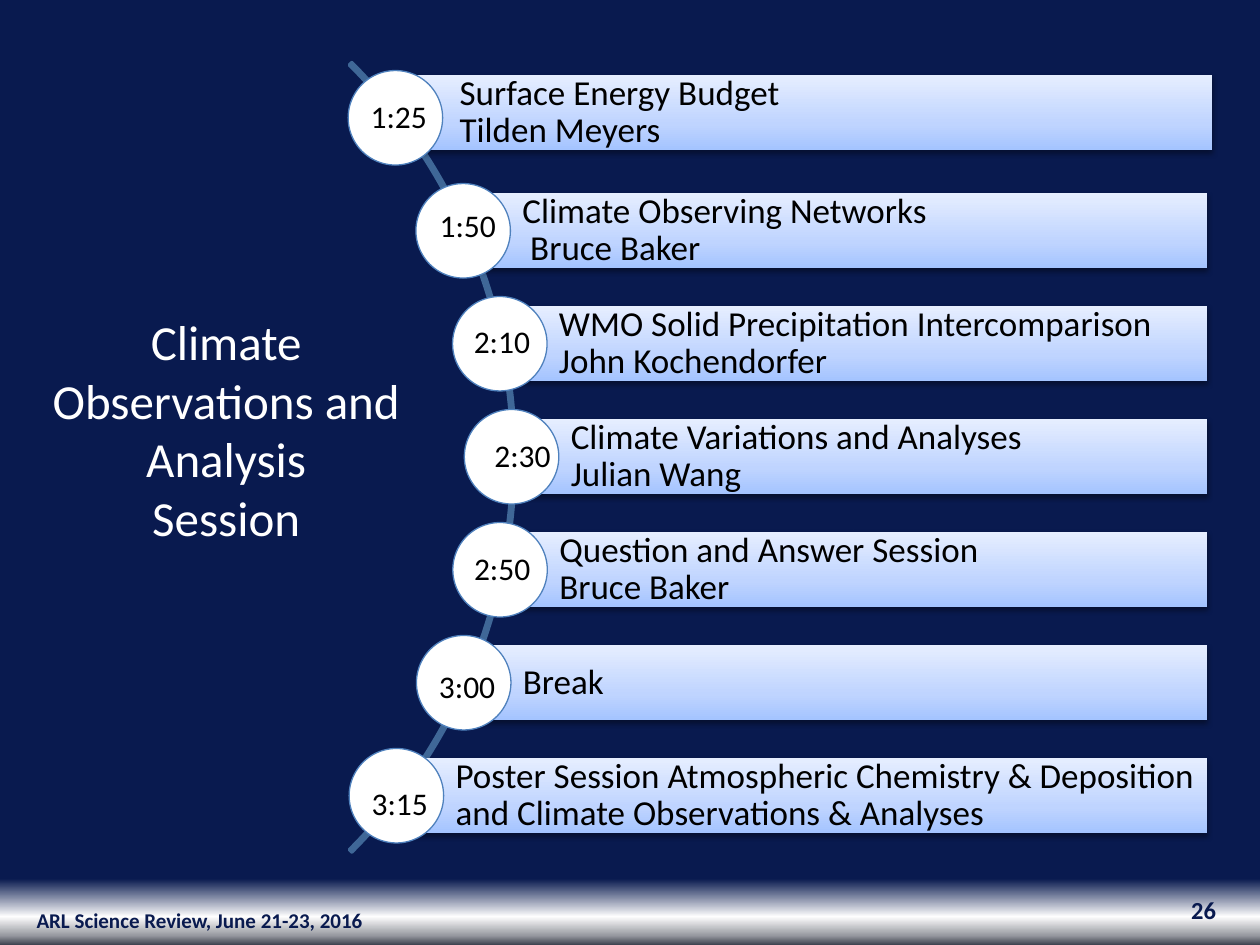
"""Build the session agenda slide with times set along an arc."""
from dataclasses import dataclass
from math import sqrt

from lxml.etree import SubElement
from pptx import Presentation
from pptx.dml.color import RGBColor
from pptx.enum.shapes import MSO_SHAPE as Shp
from pptx.enum.text import MSO_ANCHOR as Anchor, MSO_AUTO_SIZE as Auto, PP_ALIGN as Align
from pptx.oxml import parse_xml
from pptx.oxml.ns import nsdecls, qn
from pptx.util import Inches, Pt

COLORS = {"navy": "091A4F", "white": "FFFFFF", "black": "000000", "arc": "3F6797", "ring": "4F81BD"}
BAR_STOPS = [(0, "A4C4FF"), (35, "BFD4FF"), (100, "E6EEFF")]
PAGE_STOPS = [(93, "091A4F"), (97, "FEFEFE"), (99, "9799A0"), (100, "3C414E"), (100, "494E5A"),
              (100, "636771"), (100, "2F3442"), (100, "FFFFFF"), (100, "9DA0A6"), (100, "7F7F7F")]
ARC_X, ARC_Y, ARC_R = -0.34, 3.63, 4.43
TRACK_R = 4.4
DOT, BAR_H, BAR_RIGHT = 0.75, 0.6, 9.58
FIRST_Y, LAST_Y = 0.935, 6.315


@dataclass
class Session:
    """One agenda row; label is the offset of the time from its circle."""
    time: str
    lines: list[str]
    label: tuple[float, float]
    nudge: tuple[float, float] = (0, 0)


SESSIONS = [
    Session("1:25", ["Surface Energy Budget", "Tilden Meyers"], (0.08, 0.16), (0.04, -0.04)),
    Session("1:50", ["Climate Observing Networks", " Bruce Baker"], (0.09, 0.13)),
    Session("2:10", ["WMO Solid Precipitation Intercomparison", "John Kochendorfer"], (0.07, 0.15)),
    Session("2:30", ["Climate Variations and Analyses", "Julian Wang"], (0.14, 0.16)),
    Session("2:50", ["Question and Answer Session", "Bruce Baker"], (0.07, 0.16)),
    Session("3:00", ["Break"], (0.08, 0.2)),
    Session("3:15", ["Poster Session Atmospheric Chemistry & Deposition "
                     "and Climate Observations & Analyses"], (0.08, 0.23)),
]


def rgb(name: str) -> RGBColor:
    """Look up a named colour."""
    return RGBColor.from_string(COLORS[name])


def set_gradient(fill, element, stops: list, angle: int) -> None:
    """Give a fill a linear gradient with any number of stops."""
    fill.gradient()
    fill.gradient_angle = angle
    gs_list = element.find(".//" + qn("a:gsLst"))
    for gs in list(gs_list):
        gs_list.remove(gs)
    for pos, color in stops:
        gs = SubElement(gs_list, qn("a:gs"), pos=str(pos * 1000))
        SubElement(gs, qn("a:srgbClr"), val=color)


def add_run(p, text: str, size: int, color: str, bold: bool = False) -> None:
    """Append a formatted run to a paragraph."""
    r = p.add_run()
    r.text = text
    r.font.name, r.font.size, r.font.bold = "Calibri", Pt(size), bold
    r.font.color.rgb = rgb(color)


def add_label(s, box: tuple, text: str, size: int, color: str, align=Align.LEFT,
              bold: bool = False, wrap: bool = True, anchor=Anchor.MIDDLE) -> None:
    """Add a one-line text box."""
    tf = s.shapes.add_textbox(*map(Inches, box)).text_frame
    tf.word_wrap, tf.vertical_anchor = wrap, anchor
    p = tf.paragraphs[0]
    p.alignment = align
    add_run(p, text, size, color, bold)


def add_shape(s, kind, box: tuple):
    """Add a preset shape without the theme shadow."""
    sp = s.shapes.add_shape(kind, *map(Inches, box))
    sp.shadow.inherit = False
    return sp


def set_line(sp, color: str, width: float) -> None:
    """Set the outline of a shape."""
    sp.line.color.rgb = rgb(color)
    sp.line.width = Pt(width)


def add_bar(s, x: float, y: float, width: float, lines: list[str]) -> None:
    """Add a gradient bar that holds the session text."""
    sp = add_shape(s, Shp.RECTANGLE, (x, y, width, BAR_H))
    set_gradient(sp.fill, sp._element.spPr, BAR_STOPS, 90)
    sp.line.fill.background()
    sp._element.spPr.find(qn("a:effectLst")).append(parse_xml(
        f'<a:outerShdw {nsdecls("a")} blurRad="40000" dist="20000" dir="5400000" rotWithShape="0">'
        '<a:srgbClr val="000000"><a:alpha val="38000"/></a:srgbClr></a:outerShdw>'))
    tf = sp.text_frame
    tf.word_wrap, tf.vertical_anchor = True, Anchor.MIDDLE
    tf.margin_left = Inches(0.47)
    tf.margin_top = tf.margin_right = tf.margin_bottom = Inches(0.06)
    for i, line in enumerate(lines):
        p = tf.add_paragraph() if i else tf.paragraphs[0]
        p.alignment, p.line_spacing = Align.LEFT, 0.9
        add_run(p, line, 20, "black")


def add_title(s) -> None:
    """Place and fill the title."""
    title = s.shapes.title
    title.left, title.top, title.width, title.height = map(Inches, (0.17, 2.42, 3.25, 2.5))
    tf = title.text_frame
    tf.word_wrap, tf.auto_size, tf.vertical_anchor = True, Auto.NONE, Anchor.TOP
    p = tf.paragraphs[0]
    p.alignment = Align.CENTER
    add_run(p, "Climate Observations and Analysis", 28, "white")
    p.add_line_break()
    add_run(p, "Session", 28, "white")


def add_arc(s) -> None:
    """Draw the arc that the circles sit on."""
    sp = add_shape(s, Shp.BLOCK_ARC, (ARC_X - ARC_R, ARC_Y - ARC_R, 2 * ARC_R, 2 * ARC_R))
    for i, value in enumerate((189, 27, 0.003)):
        sp.adjustments[i] = value
    sp.fill.background()
    set_line(sp, "arc", 2)


def add_session(s, session: Session, y: float) -> tuple[float, float]:
    """Draw the bar and circle centred at height y and return the circle's corner."""
    x = ARC_X + sqrt(TRACK_R ** 2 - (y - ARC_Y) ** 2)
    dx, dy = session.nudge
    add_bar(s, x + dx, y - BAR_H / 2 + dy, BAR_RIGHT - x, session.lines)
    left, top = x - DOT / 2, y - DOT / 2
    dot = add_shape(s, Shp.OVAL, (left, top, DOT, DOT))
    dot.fill.solid()
    dot.fill.fore_color.rgb = rgb("white")
    set_line(dot, "ring", 0.75)
    return left, top


def main() -> None:
    """Build and save the slide."""
    prs = Presentation()
    prs.slide_width, prs.slide_height = Inches(10), Inches(7.5)
    s = prs.slides.add_slide(prs.slide_layouts[5])
    set_gradient(s.background.fill, s._element, PAGE_STOPS, 270)
    add_title(s)
    add_label(s, (0, 7.1, 3.17, 0.4), "ARL Science Review, June 21-23, 2016", 12, "navy",
              Align.CENTER, bold=True)
    add_label(s, (7.42, 7.02, 2.33, 0.4), "26", 14, "navy", Align.RIGHT, bold=True)
    add_arc(s)
    pitch = (LAST_Y - FIRST_Y) / (len(SESSIONS) - 1)
    for i, session in enumerate(SESSIONS):
        left, top = add_session(s, session, FIRST_Y + i * pitch)
        dx, dy = session.label
        add_label(s, (left + dx, top + dy, 0.65, 0.4), session.time, 18, "black",
                  wrap=False, anchor=Anchor.TOP)
    prs.save("out.pptx")


if __name__ == "__main__":
    main()
